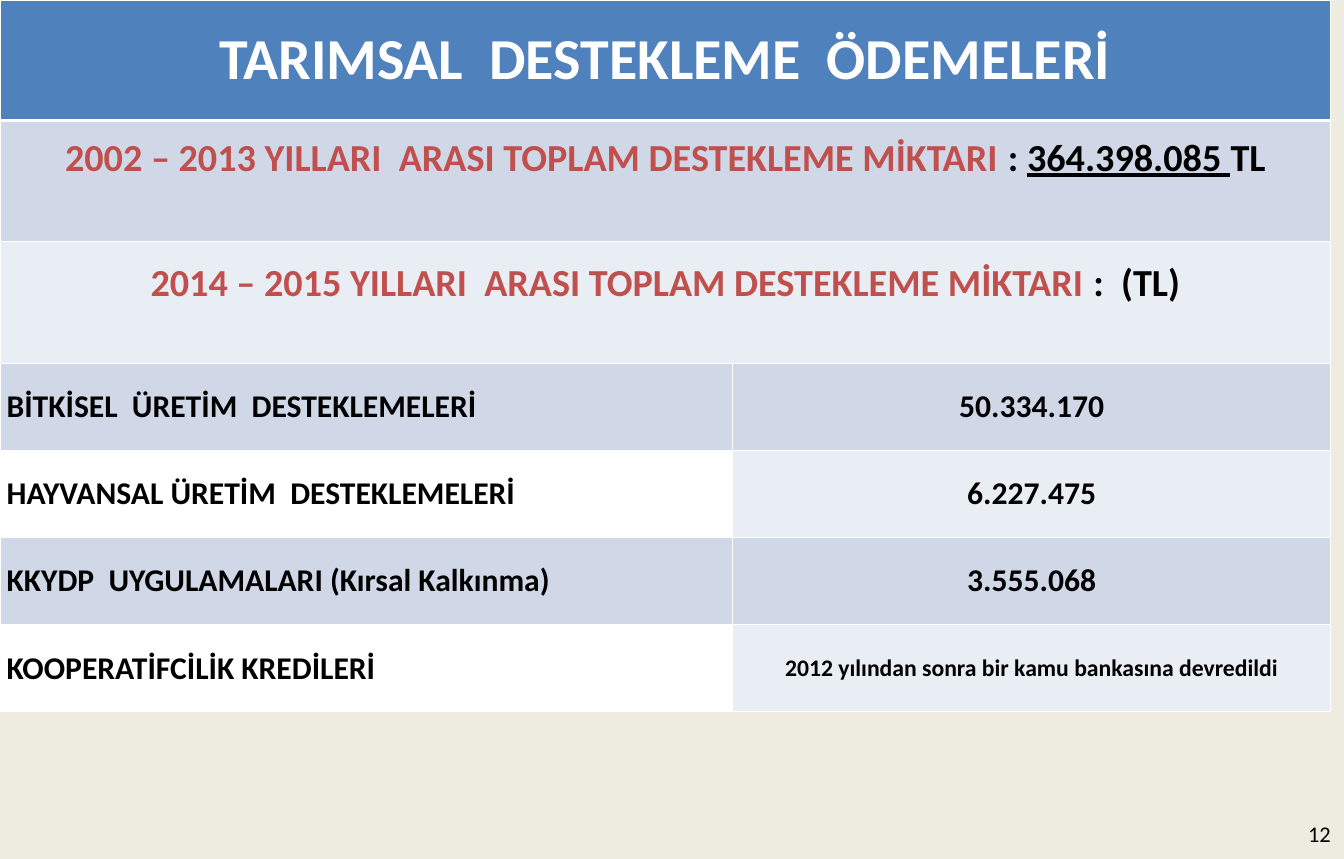
from pptx import Presentation
from pptx.dml.color import RGBColor
from pptx.enum.text import MSO_ANCHOR, PP_ALIGN
from pptx.oxml import parse_xml
from pptx.oxml.ns import nsdecls
from pptx.util import Inches, Pt

COLORS = {"ground": "EEECE1", "header": "4F81BD", "band": "D0D8E8",
          "light": "E9EDF4", "white": "FFFFFF", "red": "C0504D", "black": "000000"}
COLUMNS = [7.73, 6.31]
ROWS = [1.27, 1.28, 1.28] + [0.92] * 4

# Merged rows: runs of (text, format), fill, bottom margin
TOTAL = {"size": Pt(29), "color": "red"}
AMOUNT = {"size": Pt(29)}
BANNERS = [
    ([("TARIMSAL  DESTEKLEME  ÖDEMELERİ", {"size": Pt(44), "color": "white"})], "header", 0),
    ([("2002 – 2013 YILLARI  ARASI TOPLAM DESTEKLEME MİKTARI ", TOTAL), (": ", AMOUNT),
      ("364.398.085 ", {**AMOUNT, "underline": True}), ("TL", AMOUNT)], "band", 0.48),
    ([("2014 – 2015 YILLARI  ARASI TOPLAM DESTEKLEME MİKTARI ", TOTAL),
      (":  (TL)", AMOUNT)], "light", 0.4),
]
# Support items: label, value, value size
SUPPORTS = [
    ("BİTKİSEL  ÜRETİM  DESTEKLEMELERİ", "50.334.170", 24),
    ("HAYVANSAL ÜRETİM  DESTEKLEMELERİ", "6.227.475", 24),
    ("KKYDP  UYGULAMALARI (Kırsal Kalkınma)", "3.555.068", 24),
    ("KOOPERATİFCİLİK KREDİLERİ", "2012 yılından sonra bir kamu bankasına devredildi", 18),
]


def rgb(name):
    return RGBColor.from_string(COLORS[name])


def add_runs(p, runs, align):
    p.alignment = align
    for text, style in runs:
        r = p.add_run()
        r.text = text
        font = {"name": "Calibri", "bold": True, "color": "black", **style}
        r.font.color.rgb = rgb(font.pop("color"))
        for key, value in font.items():
            setattr(r.font, key, value)


def fill_cell(cell, runs, fill, align=PP_ALIGN.CENTER, left=0, bottom=0):
    layout = {"margin_left": Inches(left), "margin_right": 0, "margin_top": 0,
              "margin_bottom": Inches(bottom), "vertical_anchor": MSO_ANCHOR.MIDDLE}
    for key, value in layout.items():
        setattr(cell, key, value)
    cell.fill.solid()
    cell.fill.fore_color.rgb = rgb(fill)
    add_runs(cell.text_frame.paragraphs[0], runs, align)


def set_borders(cell, top=1, bottom=1):
    tc_pr = cell._tc.get_or_add_tcPr()
    widths = {"lnL": 1, "lnR": 1, "lnT": top, "lnB": bottom}
    for i, (side, width) in enumerate(widths.items()):
        tc_pr.insert(i, parse_xml(
            f'<a:{side} {nsdecls("a")} w="{Pt(width)}"><a:solidFill>'
            f'<a:srgbClr val="{COLORS["white"]}"/></a:solidFill></a:{side}>'))


def add_support_table(s, x, y):
    table = s.shapes.add_table(len(ROWS), len(COLUMNS), Inches(x), Inches(y),
                               Inches(sum(COLUMNS)), Inches(sum(ROWS))).table
    for column, width in zip(table.columns, COLUMNS):
        column.width = Inches(width)
    for row, height in zip(table.rows, ROWS):
        row.height = Inches(height)

    # Heading and totals
    for i, (runs, fill, bottom) in enumerate(BANNERS):
        table.cell(i, 0).merge(table.cell(i, 1))
        fill_cell(table.cell(i, 0), runs, fill, bottom=bottom)

    # Support items
    for i, (label, value, size) in enumerate(SUPPORTS):
        row = i + len(BANNERS)
        fills = ("white", "light") if i % 2 else ("band", "band")
        fill_cell(table.cell(row, 0), [(label, {"size": Pt(24)})], fills[0],
                  PP_ALIGN.LEFT, left=0.07)
        fill_cell(table.cell(row, 1), [(value, {"size": Pt(size)})], fills[1])

    # White grid with a heavier rule under the heading
    for i, row in enumerate(table.rows):
        for cell in row.cells:
            set_borders(cell, top=3 if i == 1 else 1, bottom=3 if i == 0 else 1)


def add_page_number(s, x, y, w, h):
    tf = s.shapes.add_textbox(Inches(x), Inches(y), Inches(w), Inches(h)).text_frame
    layout = {"word_wrap": True, "vertical_anchor": MSO_ANCHOR.BOTTOM, "margin_left": 0,
              "margin_right": 0, "margin_top": 0, "margin_bottom": 0}
    for key, value in layout.items():
        setattr(tf, key, value)
    add_runs(tf.paragraphs[0], [("12", {"size": Pt(17), "bold": False})], PP_ALIGN.RIGHT)


def main():
    prs = Presentation()
    prs.slide_width, prs.slide_height = Inches(14.18), Inches(9.06)
    s = prs.slides.add_slide(prs.slide_layouts[6])
    s.background.fill.solid()
    s.background.fill.fore_color.rgb = rgb("ground")
    add_page_number(s, 13.4, 8.64, 0.64, 0.29)
    add_support_table(s, 0, 0)
    prs.save("out.pptx")


if __name__ == "__main__":
    main()
